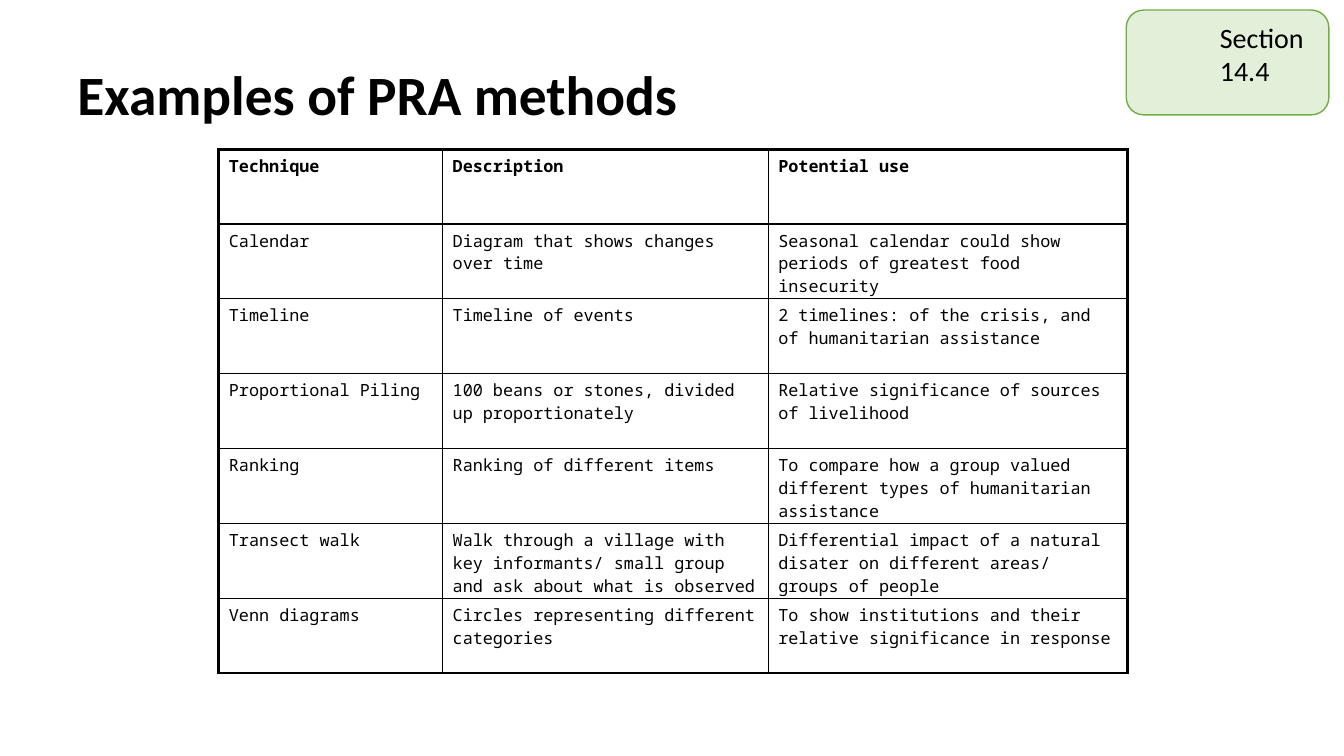
from lxml.etree import SubElement
from pptx import Presentation
from pptx.dml.color import RGBColor
from pptx.enum.shapes import MSO_SHAPE
from pptx.enum.text import MSO_ANCHOR, PP_ALIGN
from pptx.oxml.ns import qn
from pptx.util import Inches, Pt

BLACK = "000000"
COLUMN_WIDTHS = [2.22, 3.23, 3.56]
METHODS = [
    ("Technique", "Description", "Potential use"),
    ("Calendar", "Diagram that shows changes over time",
     "Seasonal calendar could show periods of greatest food insecurity"),
    ("Timeline", "Timeline of events",
     "2 timelines: of the crisis, and of humanitarian assistance"),
    ("Proportional Piling", "100 beans or stones, divided up proportionately",
     "Relative significance of sources of livelihood"),
    ("Ranking", "Ranking of different items",
     "To compare how a group valued different types of humanitarian assistance"),
    ("Transect walk",
     "Walk through a village with key informants/ small group and ask about what is observed",
     "Differential impact of a natural disater on different areas/ groups of people"),
    ("Venn diagrams", "Circles representing different categories",
     "To show institutions and their relative significance in response"),
]


def rgb(value):
    return RGBColor.from_string(value)


def set_text(p, text, font, size, bold=False):
    p.text = text
    p.font.name = font
    p.font.size = Pt(size)
    p.font.bold = bold
    p.font.color.rgb = rgb(BLACK)


def set_space_before(p, percent):
    pPr = p._p.get_or_add_pPr()
    spacing = SubElement(pPr, qn("a:spcBef"))
    SubElement(spacing, qn("a:spcPct"), val=str(percent * 1000))
    pPr.insert(0, spacing)


def set_border(cell, side, width):
    tcPr = cell._tc.get_or_add_tcPr()
    line = SubElement(tcPr, qn(f"a:ln{side}"), w=str(Pt(width)))
    fill = SubElement(line, qn("a:solidFill"))
    SubElement(fill, qn("a:srgbClr"), val=BLACK)


def add_title(slide, x, y, w, h):
    tf = slide.shapes.add_textbox(Inches(x), Inches(y), Inches(w), Inches(h)).text_frame
    tf.word_wrap = True
    tf.vertical_anchor = MSO_ANCHOR.MIDDLE
    p = tf.paragraphs[0]
    set_text(p, "Examples of PRA methods", "Calibri", 39.6, bold=True)
    p.line_spacing = 0.9


def add_methods_table(slide, x, y, w, h):
    rows, cols = len(METHODS), len(COLUMN_WIDTHS)
    table = slide.shapes.add_table(
        rows, cols, Inches(x), Inches(y), Inches(w), Inches(h)).table
    table.first_row = False
    table.horz_banding = False
    for column, width in zip(table.columns, COLUMN_WIDTHS):
        column.width = Inches(width)
    for i, texts in enumerate(METHODS):
        table.rows[i].height = Inches(h / rows)
        for j, text in enumerate(texts):
            cell = table.cell(i, j)
            p = cell.text_frame.paragraphs[0]
            set_text(p, text, "Noto Sans Mono", 12, bold=i == 0)
            set_space_before(p, 20)
            outer_edges = {"L": j == 0, "R": j == cols - 1,
                           "T": i == 0, "B": i == rows - 1}
            for side, outer in outer_edges.items():
                set_border(cell, side, 2.25 if outer else 1)
            cell.fill.background()


def add_section_badge(slide, x, y, w, h):
    sp = slide.shapes.add_shape(
        MSO_SHAPE.ROUNDED_RECTANGLE, Inches(x), Inches(y), Inches(w), Inches(h))
    sp.shadow.inherit = False
    sp.fill.solid()
    sp.fill.fore_color.rgb = rgb("E2F0D9")
    sp.line.color.rgb = rgb("70AD47")
    sp.line.width = Pt(1)
    tf = sp.text_frame
    tf.word_wrap = True
    tf.vertical_anchor = MSO_ANCHOR.TOP
    p = tf.paragraphs[0]
    set_text(p, "Section\v14.4", "Calibri", 20)
    p.alignment = PP_ALIGN.LEFT
    p._p.get_or_add_pPr().set("marL", str(Inches(0.78)))


def main():
    prs = Presentation()
    prs.slide_width = Inches(13.33)
    prs.slide_height = Inches(7.5)
    slide = prs.slides.add_slide(prs.slide_layouts[6])
    add_title(slide, 0.67, 0.62, 12, 0.7)
    add_methods_table(slide, 2.17, 1.48, sum(COLUMN_WIDTHS), 5.2)
    add_section_badge(slide, 11.17, 0.1, 2.01, 1.04)
    prs.save("out.pptx")


if __name__ == "__main__":
    main()
